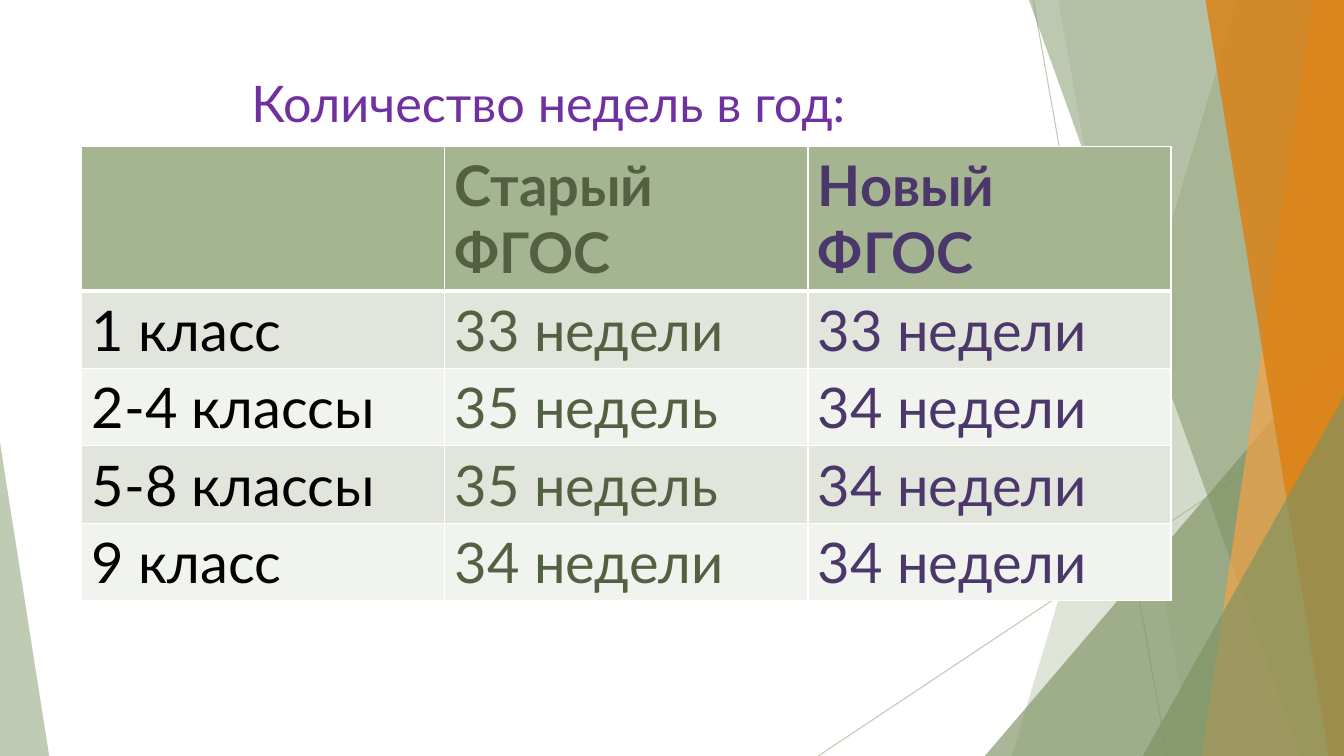
from dataclasses import dataclass
from lxml.etree import SubElement as Sub
from pptx import Presentation
from pptx.dml.color import RGBColor as Rgb
from pptx.enum.shapes import MSO_CONNECTOR as Link, MSO_SHAPE as Form
from pptx.enum.text import MSO_ANCHOR as Anchor, MSO_AUTO_SIZE as Fit, PP_ALIGN as Align
from pptx.oxml.ns import qn
from pptx.util import Cm, Pt

WIDE, HIGH = 33.87, 19.05


@dataclass(frozen=True)
class Theme:
    font: str = "Lato"
    head: int = 36
    body: int = 40
    sage: str = "A5B592"
    moss: str = "7D9263"
    peach: str = "F3A447"
    orange: str = "DD7E0E"
    title: str = "7030A0"
    white: str = "FFFFFF"
    inks: tuple = ("000000", "536142", "4C376B")
    bands: tuple = ("F0F3EE", "E1E5DC")


LOOK = Theme()
ROWS = [
    ("", "Старый ФГОС", "Новый ФГОС"),
    ("1 класс", "33 недели", "33 недели"),
    ("2-4 классы", "35 недель", "34 недели"),
    ("5-8 классы", "35 недель", "34 недели"),
    ("9 класс", "34 недели", "34 недели"),
]


def apply(item, form):
    for key, value in form.items():
        setattr(item, key, value)


def style(font, size, ink, bold=False):
    apply(font, {"name": LOOK.font, "size": Pt(size), "bold": bold})
    font.color.rgb = Rgb.from_string(ink)


def fade(shape, alpha):
    for tint in shape.element.spPr.iter(qn("a:srgbClr")):
        Sub(tint, qn("a:alpha"), val=str(alpha * 1000))


def paint(shape, ink, alpha):
    shape.shadow.inherit = False
    shape.fill.solid()
    shape.fill.fore_color.rgb = Rgb.from_string(ink)
    shape.line.fill.background()
    fade(shape, alpha)


def add_ray(shapes, *ends):
    ray = shapes.add_connector(Link.STRAIGHT, *map(Cm, ends))
    ray.line.width = Pt(0.75)
    ray.line.color.rgb = Rgb.from_string(LOOK.sage)
    fade(ray, 70)
    Sub(ray.element.spPr, qn("a:effectLst"))


def add_sheet(shapes, top, base, ink, alpha):
    pen = shapes.build_freeform(Cm(top), 0)
    pen.add_line_segments([(Cm(WIDE), 0), (Cm(WIDE), Cm(HIGH)), (Cm(base), Cm(HIGH))])
    paint(pen.convert_to_shape(), ink, alpha)


def add_peak(shapes, left, top, width, tip, ink, alpha):
    box = map(Cm, (left, top, width, HIGH - top))
    peak = shapes.add_shape(Form.ISOSCELES_TRIANGLE, *box)
    peak.adjustments[0] = tip
    paint(peak, ink, alpha)


def add_decor(shapes):
    add_ray(shapes, 26.04, 0, 29.41, HIGH)
    add_ray(shapes, WIDE, 10.24, 20.62, HIGH)
    add_sheet(shapes, 31.19, 25.5, LOOK.sage, 36)
    add_sheet(shapes, 26.67, 30.05, LOOK.sage, 20)
    add_peak(shapes, 24.82, 8.46, WIDE - 24.82, 1, LOOK.moss, 66)
    add_sheet(shapes, 25.93, 32.79, LOOK.moss, 50)
    add_sheet(shapes, 33.1, 30.28, LOOK.peach, 70)
    add_sheet(shapes, 30.38, 33.48, LOOK.orange, 80)
    add_peak(shapes, 28.8, 9.98, WIDE - 28.8, 1, LOOK.moss, 66)
    add_peak(shapes, 0, 11.15, 1.24, 0, LOOK.sage, 70)


def set_title(title, text):
    apply(title, {"left": Cm(1.88), "top": Cm(1.7), "width": Cm(23.88), "height": Cm(3.66)})
    frame = title.text_frame
    apply(frame, {"text": text, "word_wrap": True, "auto_size": Fit.NONE,
                  "vertical_anchor": Anchor.TOP})
    line = frame.paragraphs[0]
    line.alignment = Align.CENTER
    style(line.runs[0].font, LOOK.head, LOOK.title)
    title.element.getparent().append(title.element)


def edge(cell, row):
    sides = {"L": 1, "R": 1, "T": 3 if row == 1 else 1, "B": 3 if row == 0 else 1}
    props = cell._tc.get_or_add_tcPr()
    for side, width in sides.items():
        line = Sub(props, qn(f"a:ln{side}"), w=str(Pt(width)))
        Sub(Sub(line, qn("a:solidFill")), qn("a:srgbClr"), val=LOOK.white)


def add_grid(shapes):
    box = map(Cm, (2.06, 3.69, 27.45, 11.44))
    grid = shapes.add_table(len(ROWS), len(ROWS[0]), *box).table
    for i, texts in enumerate(ROWS):
        grid.rows[i].height = Cm(1.95 if i else 3.64)
        for j, text in enumerate(texts):
            cell = grid.cell(i, j)
            edge(cell, i)
            cell.fill.solid()
            cell.fill.fore_color.rgb = Rgb.from_string(LOOK.bands[i % 2] if i else LOOK.sage)
            if text:
                cell.text = text
                font = cell.text_frame.paragraphs[0].runs[0].font
                style(font, LOOK.body, LOOK.inks[j], i == 0)


def main():
    deck = Presentation()
    apply(deck, {"slide_width": Cm(WIDE), "slide_height": Cm(HIGH)})
    slide = deck.slides.add_slide(deck.slide_layouts[5])
    add_decor(slide.shapes)
    set_title(slide.shapes.title, "Количество недель в год:")
    add_grid(slide.shapes)
    deck.save("out.pptx")


if __name__ == "__main__":
    main()
